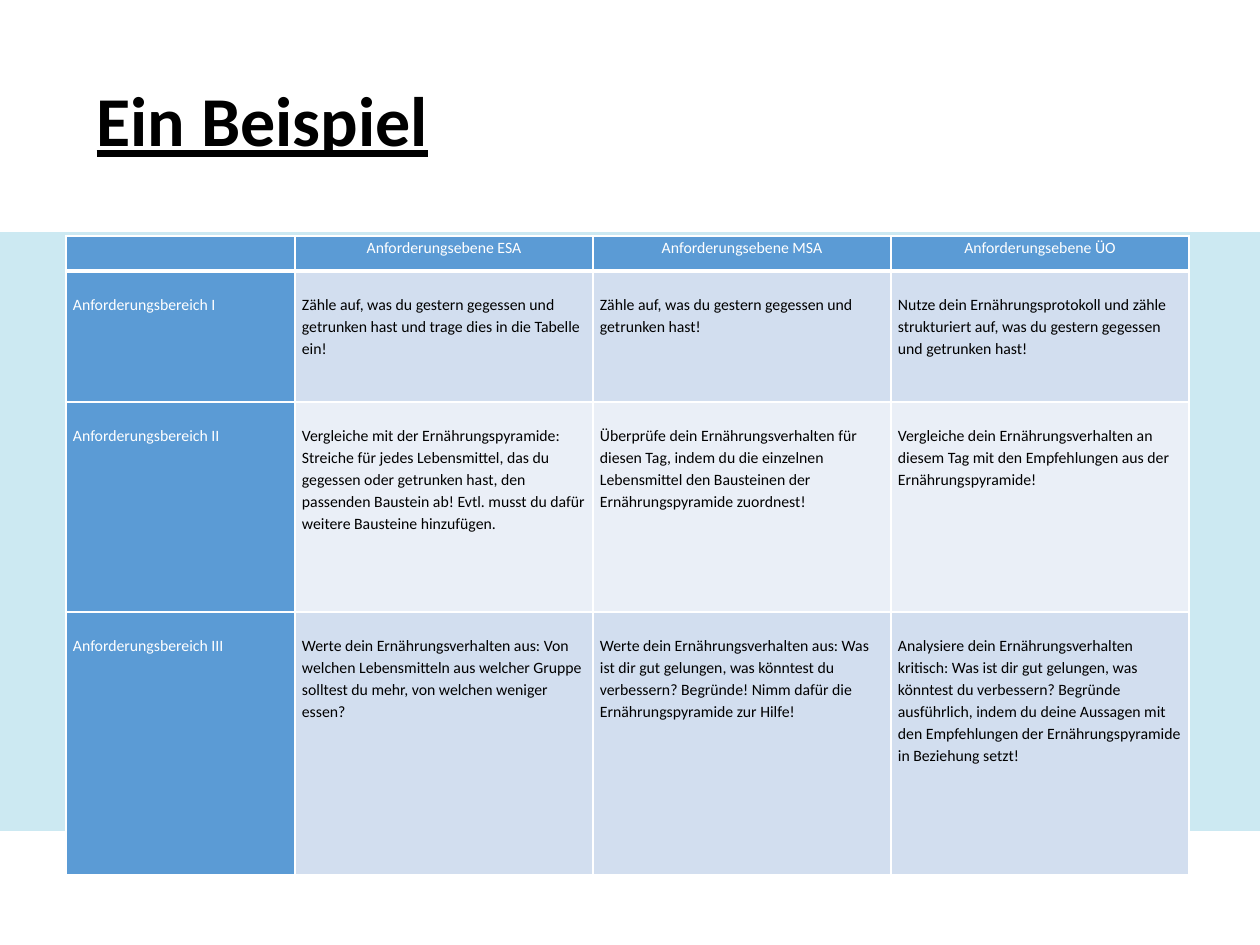
from dataclasses import dataclass

from lxml.etree import SubElement
from pptx import Presentation
from pptx.dml.color import RGBColor as RGB
from pptx.enum.shapes import MSO_SHAPE as Shape
from pptx.enum.text import MSO_ANCHOR as Anchor, MSO_AUTO_SIZE as Fit, PP_ALIGN as Align
from pptx.oxml.ns import qn
from pptx.util import Pt


@dataclass(frozen=True)
class Theme:
    font: str = "Calibri"
    white: str = "FFFFFF"
    black: str = "000000"
    blue: str = "5B9BD5"
    band: str = "CCE9F2"
    odd: str = "D2DEEF"
    even: str = "EAEFF7"
    title: int = 40
    cell: int = 9


T = Theme()
COLS = [229, 298, 298, 298]
ROWS = [35, 131, 210, 263]
PAD = 7
DROP = 22  # one text line above the wording in body cells
TASKS = [
    ["", "Anforderungsebene ESA", "Anforderungsebene MSA", "Anforderungsebene ÜO"],
    ["Anforderungsbereich I",
     "Zähle auf, was du gestern gegessen und getrunken hast und trage dies "
     "in die Tabelle ein!",
     "Zähle auf, was du gestern gegessen und getrunken hast!",
     "Nutze dein Ernährungsprotokoll und zähle strukturiert auf, was du "
     "gestern gegessen und getrunken hast!"],
    ["Anforderungsbereich II",
     "Vergleiche mit der Ernährungspyramide: Streiche für jedes Lebensmittel, "
     "das du gegessen oder getrunken hast, den passenden Baustein ab! Evtl. "
     "musst du dafür weitere Bausteine hinzufügen.",
     "Überprüfe dein Ernährungsverhalten für diesen Tag, indem du die "
     "einzelnen Lebensmittel den Bausteinen der Ernährungspyramide zuordnest!",
     "Vergleiche dein Ernährungsverhalten an diesem Tag mit den Empfehlungen "
     "aus der Ernährungspyramide!"],
    ["Anforderungsbereich III",
     "Werte dein Ernährungsverhalten aus: Von welchen Lebensmitteln aus "
     "welcher Gruppe solltest du mehr, von welchen weniger essen?",
     "Werte dein Ernährungsverhalten aus: Was ist dir gut gelungen, was "
     "könntest du verbessern? Begründe! Nimm dafür die Ernährungspyramide "
     "zur Hilfe!",
     "Analysiere dein Ernährungsverhalten kritisch: Was ist dir gut gelungen, "
     "was könntest du verbessern? Begründe ausführlich, indem du deine "
     "Aussagen mit den Empfehlungen der Ernährungspyramide in Beziehung setzt!"],
]


def px(n):
    return round(n * 914400 / 126)


def write(frame, text, size, color, bold=False, line=False, align=Align.LEFT, gap=1.0):
    para = frame.paragraphs[0]
    para.alignment = align
    para.line_spacing = gap
    if not text:  # keeps an empty cell as low as its row
        SubElement(para._p, qn("a:endParaRPr"), sz=str(size * 100))
        return
    run = para.add_run()
    run.text = text
    font = run.font
    font.name, font.size = T.font, Pt(size)
    font.bold, font.underline = bold, line
    font.color.rgb = RGB.from_string(color)


def paint(item, color):
    item.fill.solid()
    item.fill.fore_color.rgb = RGB.from_string(color)


def edge(cell, low):
    """Draw white cell borders; low is the width of the bottom one in points."""
    props = cell._tc.get_or_add_tcPr()
    for spot, (side, width) in enumerate(zip("LRTB", (1, 1, 1, low))):
        rule = SubElement(props, qn(f"a:ln{side}"), w=str(Pt(width)))
        fill = SubElement(rule, qn("a:solidFill"))
        SubElement(fill, qn("a:srgbClr"), val=T.white)
        props.insert(spot, rule)


def add_band(slide):
    band = slide.shapes.add_shape(Shape.RECTANGLE, 0, px(232), px(1260), px(599))
    band.shadow.inherit = False
    paint(band, T.band)
    band.line.fill.background()


def add_title(slide, text):
    title = slide.shapes.title
    title.left, title.top = px(84), px(32)
    title.width, title.height = px(1091), px(184)
    frame = title.text_frame
    frame.auto_size = Fit.NONE
    frame.vertical_anchor = Anchor.MIDDLE
    write(frame, text, T.title, T.black, bold=True, line=True, gap=0.9)


def fill_cell(cell, text, row, col):
    head = row == 0
    label = head or col == 0
    cell.margin_left = cell.margin_right = px(PAD)
    cell.margin_top = 0 if head else px(DROP)
    cell.margin_bottom = 0
    paint(cell, T.blue if label else T.odd if row % 2 else T.even)
    edge(cell, 3 if head else 1)
    write(cell.text_frame, text, T.cell, T.white if label else T.black,
          align=Align.CENTER if head else Align.LEFT, gap=1.15)


def add_grid(slide, data):
    table = slide.shapes.add_table(len(ROWS), len(COLS), px(66), px(236),
                                   px(sum(COLS)), px(sum(ROWS))).table
    table.first_row = table.horz_banding = False
    for col, width in zip(table.columns, COLS):
        col.width = px(width)
    for row, (high, texts) in enumerate(zip(ROWS, data)):
        table.rows[row].height = px(high)
        for col, text in enumerate(texts):
            fill_cell(table.cell(row, col), text, row, col)


def main():
    deck = Presentation()
    deck.slide_width, deck.slide_height = px(1260), px(945)
    slide = deck.slides.add_slide(deck.slide_layouts[5])
    add_band(slide)
    add_grid(slide, TASKS)
    add_title(slide, "Ein Beispiel")
    deck.save("out.pptx")


if __name__ == "__main__":
    main()
